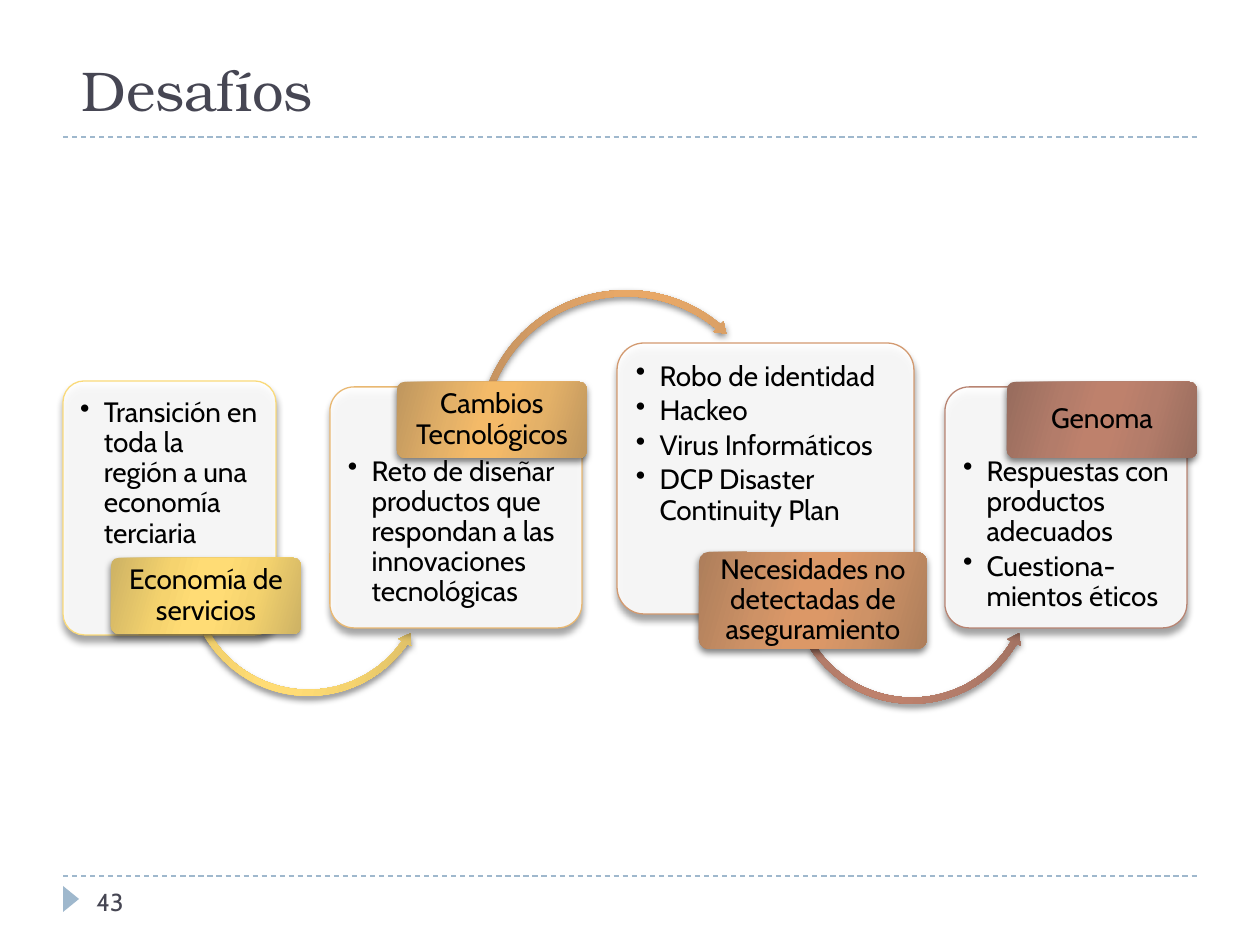
"""Build the "Desafíos" slide: four linked cards with captions and curved arrows."""
import lxml.etree
import pptx
import pptx.dml.color
import pptx.enum.dml
import pptx.enum.shapes
import pptx.enum.text
import pptx.oxml.ns
import pptx.util

PX = 914400 / 126
SHAPE = pptx.enum.shapes.MSO_SHAPE
ALIGN = pptx.enum.text.PP_ALIGN
ANCHOR = pptx.enum.text.MSO_ANCHOR

COLORS = {
    "background": "FFFFFF",
    "ink": "464653",
    "text": "000000",
    "rule": "9FB8CD",
    "card": "FFFFFF",
}
SHEENS = {
    "yellow": ("CDB264", "F5D36E", "FFDC75"),
    "amber": ("BF965E", "E4B168", "F4BA68"),
    "orange": ("B6895C", "DAA066", "E8A867"),
    "copper": ("AD7E5B", "CE9266", "DC9867"),
    "brick": ("976C5D", "B37C6A", "BE816C"),
}

STEPS = [
    {
        "card": (63, 381, 213, 254), "border": "FADA7A", "drop": 0,
        "points": ["Transición en toda la región a una economía terciaria"],
        "caption": "Economía de servicios", "label": (111, 558, 190, 76), "sheen": "yellow",
        "arrow": (SHAPE.LEFT_CIRCULAR_ARROW, (184, 451, 249, 249), 0, "yellow",
                  (0.025, 3.065, 20.859, 90.284, 0.029)),
    },
    {
        "card": (330, 387, 252, 241), "border": "E9B872", "drop": 52,
        "points": ["Reto de diseñar productos que respondan a las innovaciones tecnológicas"],
        "caption": "Cambios Tecnológicos", "label": (397, 382, 190, 76), "sheen": "amber",
        "arrow": (SHAPE.CIRCULAR_ARROW, (474, 286, 304, 304), 350.3, "orange",
                  (0.021, 2.481, 191.655, 121.647, 0.024)),
    },
    {
        "card": (617, 343, 297, 271), "border": "D39A70", "drop": 0,
        "points": ["Robo de identidad", "Hackeo", "Virus Informáticos",
                   "DCP Disaster Continuity Plan"],
        "caption": "Necesidades no detectadas de aseguramiento",
        "label": (699, 552, 228, 97), "sheen": "copper",
        "arrow": (SHAPE.LEFT_CIRCULAR_ARROW, (786, 456, 252, 252), 0, "brick",
                  (0.025, 3.024, 18.406, 87.871, 0.029)),
    },
    {
        "card": (945, 387, 242, 241), "border": "B88472", "drop": 52,
        "points": ["Respuestas con productos adecuados", "Cuestiona-mientos éticos"],
        "caption": "Genoma", "label": (1007, 382, 190, 76), "sheen": "brick",
        "arrow": None,
    },
]


def emu(*lengths):
    return [pptx.util.Emu(round(length * PX)) for length in lengths]


def rgb(value):
    return pptx.dml.color.RGBColor.from_string(value)


def add_node(parent, tag, **attributes):
    node = lxml.etree.SubElement(parent, pptx.oxml.ns.qn(tag))
    for key, value in attributes.items():
        node.set(key, str(value))
    return node


class SlideBuilder:
    """Hold the style and the current slide, and draw each kind of element."""

    heading_font = "TeX Gyre Bonum"
    body_font = "Cabin"
    body_size = 16

    def __init__(self, slide):
        self.slide = slide
        slide.background.fill.solid()
        slide.background.fill.fore_color.rgb = rgb(COLORS["background"])

    def fill_text(self, frame, lines, font, size, color, insets=None, align=ALIGN.LEFT,
                  anchor=ANCHOR.TOP, spacing=None, bullets=False):
        frame.word_wrap = True
        frame.vertical_anchor = anchor
        if insets:
            (frame.margin_left, frame.margin_top,
             frame.margin_right, frame.margin_bottom) = emu(*insets)
        frame.text = "\n".join(lines)
        for paragraph in frame.paragraphs:
            if bullets:
                properties = paragraph._p.get_or_add_pPr()
                properties.set("marL", "171450")
                properties.set("indent", "-171450")
                add_node(properties, "a:buChar", char="•")
                paragraph.space_after = pptx.util.Pt(2.5)
            paragraph.alignment = align
            paragraph.line_spacing = spacing
            for run in paragraph.runs:
                run.font.name = font
                run.font.size = pptx.util.Pt(size)
                run.font.color.rgb = rgb(color)

    def text(self, box, content, font, size, anchor=ANCHOR.TOP):
        frame = self.slide.shapes.add_textbox(*emu(*box)).text_frame
        self.fill_text(frame, [content], font, size, COLORS["ink"], anchor=anchor)

    def rule(self, y):
        line = self.slide.shapes.add_connector(
            pptx.enum.shapes.MSO_CONNECTOR.STRAIGHT, *emu(63, y, 1197, y))
        line.line.color.rgb = rgb(COLORS["rule"])
        line.line.width = pptx.util.Pt(0.75)
        line.line.dash_style = pptx.enum.dml.MSO_LINE.DASH
        add_node(line._element.spPr, "a:effectLst")

    def shape(self, kind, box, rotation=0, adjustments=()):
        shape = self.slide.shapes.add_shape(kind, *emu(*box))
        shape.shadow.inherit = False
        shape.line.fill.background()
        shape.rotation = rotation
        for index, value in enumerate(adjustments):
            shape.adjustments[index] = value
        return shape

    def cast_shadow(self, shape, opacity, distance):
        effects = shape._element.spPr.find(pptx.oxml.ns.qn("a:effectLst"))
        shadow = add_node(effects, "a:outerShdw", blurRad=50800, dist=pptx.util.Pt(distance),
                          dir=5400000, rotWithShape=0)
        color = add_node(shadow, "a:srgbClr", val=COLORS["text"])
        add_node(color, "a:alpha", val=opacity * 1000)

    def apply_sheen(self, shape, name):
        edge, middle, core = SHEENS[name]
        shape.fill.gradient()
        gradient = shape._element.spPr.find(pptx.oxml.ns.qn("a:gradFill"))
        stops = gradient.find(pptx.oxml.ns.qn("a:gsLst"))
        for stop in list(stops):
            stops.remove(stop)
        for position, color in zip((0, 30, 45, 55, 73, 100),
                                   (edge, middle, core, core, middle, edge)):
            stop = add_node(stops, "a:gs", pos=position * 1000)
            add_node(stop, "a:srgbClr", val=color)
        gradient.find(pptx.oxml.ns.qn("a:lin")).set("ang", str(16 * 60000))
        self.cast_shadow(shape, 50, 2)

    def marker(self, box):
        triangle = self.shape(SHAPE.ISOSCELES_TRIANGLE, box, 90)
        triangle.fill.solid()
        triangle.fill.fore_color.rgb = rgb(COLORS["rule"])

    def card(self, box, border, points, drop):
        card = self.shape(SHAPE.ROUNDED_RECTANGLE, box, adjustments=(0.1,))
        card.fill.solid()
        card.fill.fore_color.rgb = rgb(COLORS["card"])
        tint = card._element.spPr.find(pptx.oxml.ns.qn("a:solidFill"))[0]
        add_node(tint, "a:alpha", val=90000)
        card.line.color.rgb = rgb(border)
        card.line.width = pptx.util.Pt(0.75)
        self.cast_shadow(card, 40, 3.4)
        self.fill_text(card.text_frame, points, self.body_font, self.body_size, COLORS["text"],
                       insets=(11, 11 + drop, 10, 0), spacing=0.9, bullets=True)

    def arrow(self, kind, box, rotation, sheen, adjustments):
        self.apply_sheen(self.shape(kind, box, rotation, adjustments), sheen)

    def label(self, box, caption, sheen):
        label = self.shape(SHAPE.ROUNDED_RECTANGLE, box, adjustments=(0.1,))
        self.apply_sheen(label, sheen)
        self.fill_text(label.text_frame, [caption], self.body_font, self.body_size,
                       COLORS["text"], insets=(2, 1, 2, 1), align=ALIGN.CENTER,
                       anchor=ANCHOR.MIDDLE, spacing=0.9)


def main():
    deck = pptx.Presentation()
    deck.slide_width, deck.slide_height = emu(1260, 945)
    builder = SlideBuilder(deck.slides.add_slide(deck.slide_layouts[6]))
    for y in (876, 137):
        builder.rule(y)
    builder.marker((58, 891, 26, 16))
    builder.text((69, 0, 1134, 129), "Desafíos", builder.heading_font, 32, ANCHOR.BOTTOM)
    builder.text((84, 881, 273, 50), "43", builder.body_font, 14)
    for step in STEPS:
        builder.card(step["card"], step["border"], step["points"], step["drop"])
        if step["arrow"]:
            builder.arrow(*step["arrow"])
        builder.label(step["label"], step["caption"], step["sheen"])
    deck.save("out.pptx")


if __name__ == "__main__":
    main()
